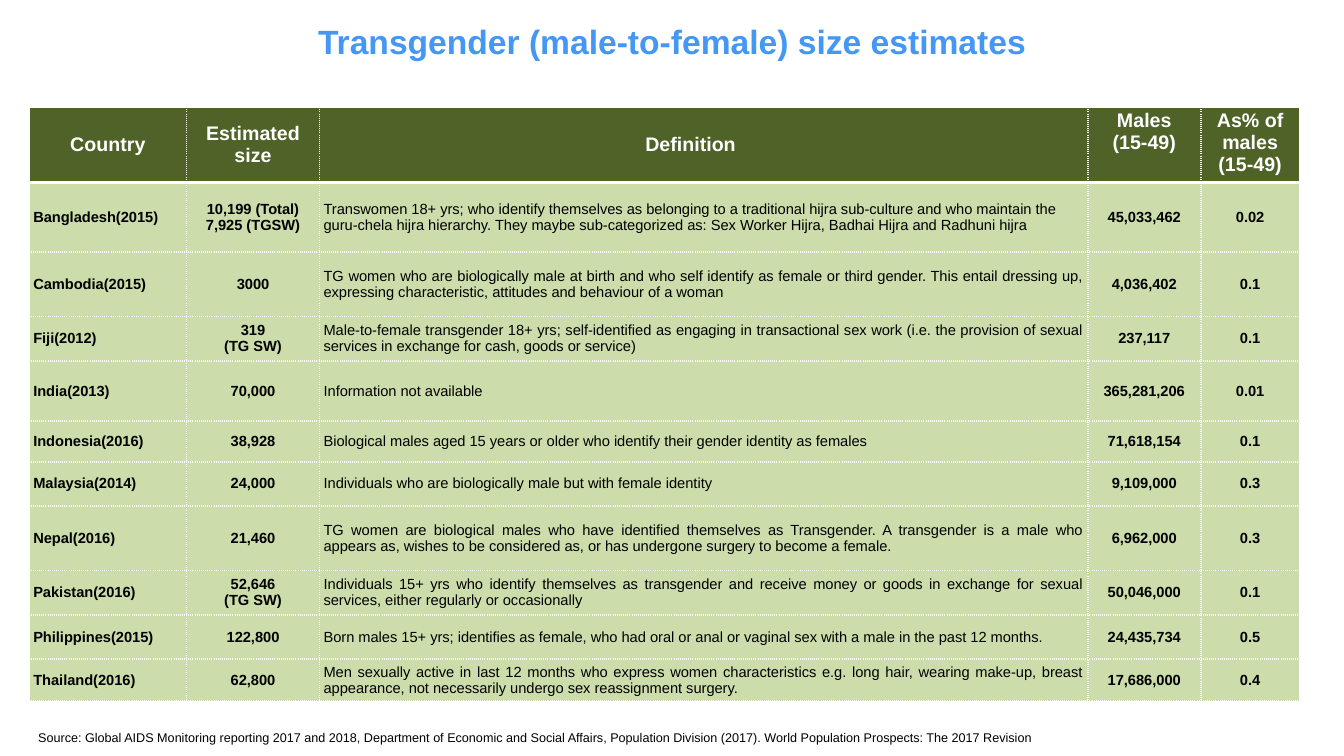
from lxml import etree
from pptx import Presentation
from pptx.dml.color import RGBColor
from pptx.enum.text import MSO_ANCHOR, PP_ALIGN
from pptx.oxml.ns import qn
from pptx.util import Inches, Pt

LEFT, CENTER, JUSTIFY = PP_ALIGN.LEFT, PP_ALIGN.CENTER, PP_ALIGN.JUSTIFY
TOP, MIDDLE = MSO_ANCHOR.TOP, MSO_ANCHOR.MIDDLE
BLUE = RGBColor(0x44, 0x97, 0xF2)
DARK_GREEN = RGBColor(0x4F, 0x62, 0x28)
LIGHT_GREEN = RGBColor(0xCC, 0xDD, 0xAB)
WHITE = RGBColor(0xFF, 0xFF, 0xFF)
BLACK = RGBColor(0, 0, 0)

COLUMN_WIDTHS = [1.56, 1.32, 7.62, 1.12, 0.98]
ROW_HEIGHTS = [0.74, 0.69, 0.64, 0.44, 0.6, 0.4, 0.44, 0.64, 0.44, 0.44, 0.42]
ROWS = [
    ("Country", "Estimated size", "Definition", "Males\n(15-49)", "As% of males\n(15-49)"),
    ("Bangladesh(2015)", "10,199 (Total)\n7,925 (TGSW)",
     "Transwomen 18+ yrs; who identify themselves as belonging to a traditional hijra "
     "sub-culture and who maintain the guru-chela hijra hierarchy. They maybe "
     "sub-categorized as: Sex Worker Hijra, Badhai Hijra and Radhuni hijra",
     "45,033,462", "0.02"),
    ("Cambodia(2015)", "3000",
     "TG women who are biologically male at birth and who self identify as female or third "
     "gender. This entail dressing up, expressing characteristic, attitudes and behaviour "
     "of a woman",
     "4,036,402", "0.1"),
    ("Fiji(2012)", "319\n(TG SW)",
     "Male-to-female transgender 18+ yrs; self-identified as engaging in transactional sex "
     "work (i.e. the provision of sexual services in exchange for cash, goods or service)",
     "237,117", "0.1"),
    ("India(2013)", "70,000", "Information not available", "365,281,206", "0.01"),
    ("Indonesia(2016)", "38,928",
     "Biological males aged 15 years or older who identify their gender identity as females",
     "71,618,154", "0.1"),
    ("Malaysia(2014)", "24,000",
     "Individuals who are biologically male but with female identity",
     "9,109,000", "0.3"),
    ("Nepal(2016)", "21,460",
     "TG women are biological males who have identified themselves as Transgender. A "
     "transgender is a male who appears as, wishes to be considered as, or has undergone "
     "surgery to become a female.",
     "6,962,000", "0.3"),
    ("Pakistan(2016)", "52,646\n(TG SW)",
     "Individuals 15+ yrs who identify themselves as transgender and receive money or goods "
     "in exchange for sexual services, either regularly or occasionally",
     "50,046,000", "0.1"),
    ("Philippines(2015)", "122,800",
     "Born males 15+ yrs; identifies as female, who had oral or anal or vaginal sex with a "
     "male in the past 12 months.",
     "24,435,734", "0.5"),
    ("Thailand(2016)", "62,800",
     "Men sexually active in last 12 months who express women characteristics e.g. long "
     "hair, wearing make-up, breast appearance, not necessarily undergo sex reassignment "
     "surgery.",
     "17,686,000", "0.4"),
]
LEFT_DEFINITIONS = ("Bangladesh(2015)", "Indonesia(2016)", "Malaysia(2014)")


def write(text_frame, text, size, color=BLACK, bold=False, align=LEFT):
    text_frame.word_wrap = True
    for index, line in enumerate(text.split("\n")):
        paragraph = text_frame.paragraphs[0] if index == 0 else text_frame.add_paragraph()
        paragraph.alignment = align
        run = paragraph.add_run()
        run.text = line
        run.font.name = "Arial"
        run.font.size = Pt(size)
        run.font.bold = bold
        run.font.color.rgb = color


def add_border(cell, side, width, dash):
    line = etree.SubElement(cell._tc.get_or_add_tcPr(), qn(f"a:ln{side}"), w=str(Pt(width)))
    fill = etree.SubElement(line, qn("a:solidFill"))
    etree.SubElement(fill, qn("a:srgbClr"), val=str(WHITE))
    etree.SubElement(line, qn("a:prstDash"), val=dash)


presentation = Presentation()
presentation.slide_width = Inches(13.33)
presentation.slide_height = Inches(7.5)
slide = presentation.slides.add_slide(presentation.slide_layouts[6])

title = slide.shapes.add_textbox(Inches(0), Inches(0.07), Inches(13.33), Inches(0.68))
title.text_frame.vertical_anchor = MIDDLE
write(title.text_frame, "Transgender (male-to-female) size estimates", 24,
      color=BLUE, bold=True, align=CENTER)

table = slide.shapes.add_table(len(ROWS), len(COLUMN_WIDTHS), Inches(0.29), Inches(1.07),
                               Inches(12.6), Inches(5.91)).table
table.horz_banding = False
for column, width in zip(table.columns, COLUMN_WIDTHS):
    column.width = Inches(width)
for row, height in zip(table.rows, ROW_HEIGHTS):
    row.height = Inches(height)

outer, dotted, header_rule = (1, "solid"), (1.5, "sysDot"), (3, "solid")
last_column = len(COLUMN_WIDTHS) - 1
for row_index, values in enumerate(ROWS):
    is_header = row_index == 0
    for column_index, value in enumerate(values):
        cell = table.cell(row_index, column_index)
        is_definition = column_index == 2
        is_country = column_index == 0
        padded = is_header or is_definition
        cell.margin_left = Inches(0.04 if padded or is_country else 0)
        cell.margin_right = Inches(0.04 if padded else 0)
        cell.margin_top = cell.margin_bottom = Inches(0.02 if padded else 0)
        cell.vertical_anchor = TOP if is_header and column_index > 2 else MIDDLE
        if is_header and is_definition:
            cell.margin_right = Inches(0.3)

        add_border(cell, "L", *(outer if is_country else dotted))
        add_border(cell, "R", *(outer if column_index == last_column else dotted))
        add_border(cell, "T", *(outer if is_header else header_rule if row_index == 1 else dotted))
        add_border(cell, "B", *(header_rule if is_header else dotted))
        cell.fill.solid()
        cell.fill.fore_color.rgb = DARK_GREEN if is_header else LIGHT_GREEN

        if is_header:
            write(cell.text_frame, value, 14, color=WHITE, bold=True, align=CENTER)
        elif is_definition:
            align = LEFT if values[0] in LEFT_DEFINITIONS else JUSTIFY
            write(cell.text_frame, value, 10.5, align=align)
        else:
            align = JUSTIFY if is_country else CENTER
            write(cell.text_frame, value, 10.5, bold=True, align=align)

source = slide.shapes.add_textbox(Inches(0.28), Inches(7.19), Inches(13.05), Inches(0.25))
write(source.text_frame,
      "Source: Global AIDS Monitoring reporting 2017 and 2018, Department of Economic and "
      "Social Affairs, Population Division (2017). World Population Prospects: The 2017 Revision",
      9)

presentation.save("out.pptx")
